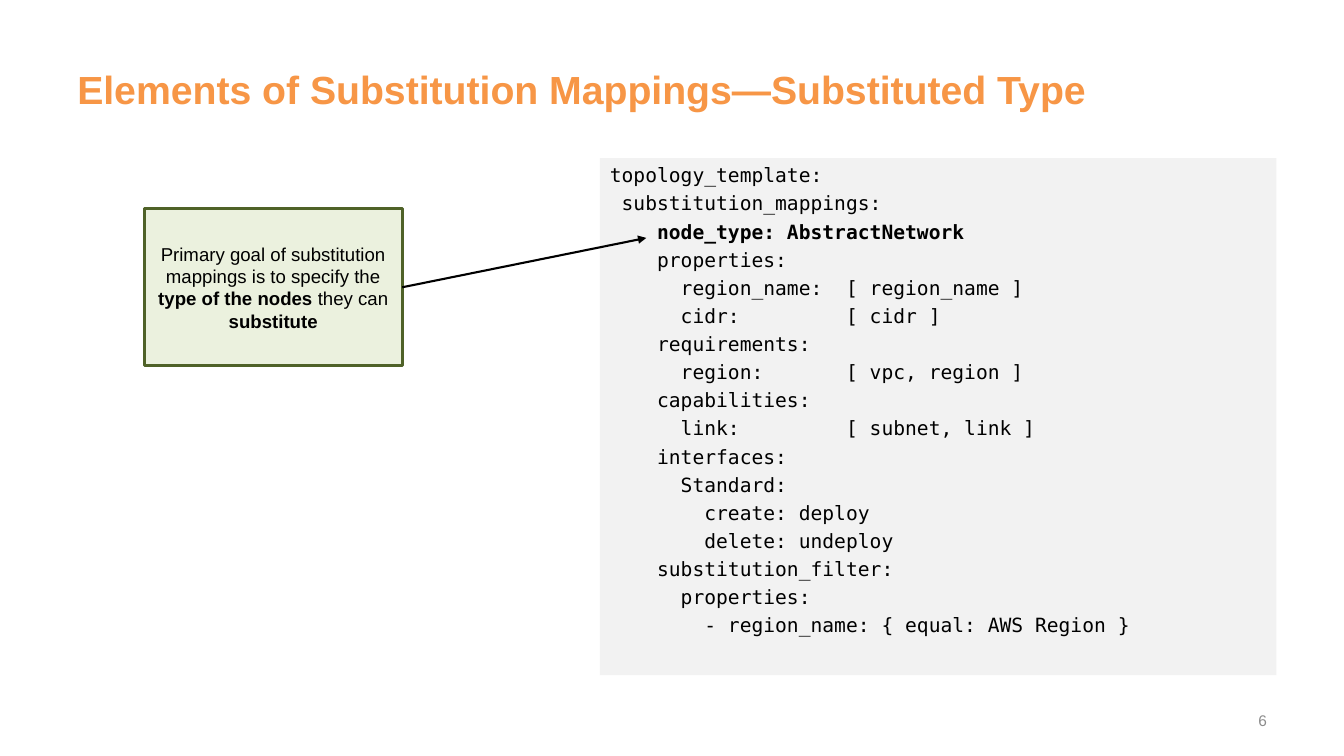
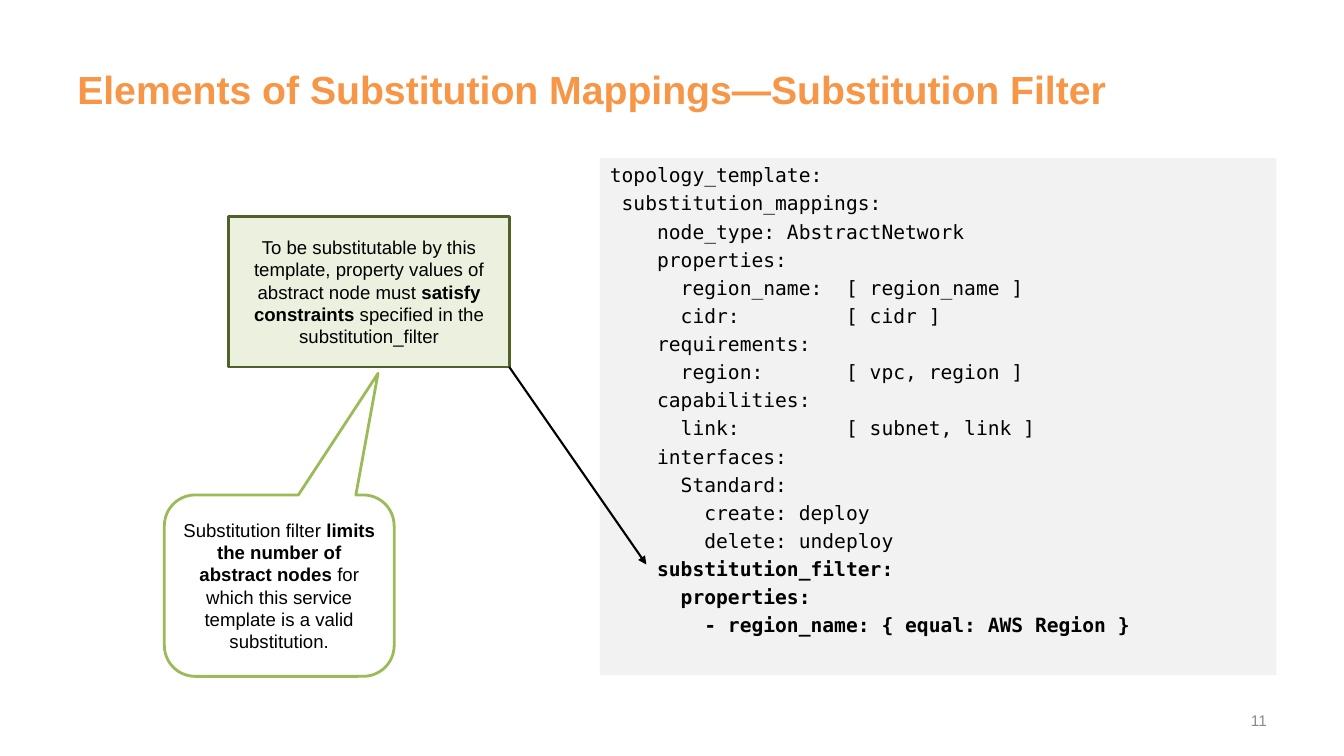
"""Build two slides on the elements of substitution mappings."""
from dataclasses import dataclass

import pptx
import pptx.dml.color
import pptx.enum.shapes
import pptx.enum.text
import pptx.oxml
import pptx.oxml.ns
import pptx.util

SHAPE = pptx.enum.shapes.MSO_SHAPE
ALIGN = pptx.enum.text.PP_ALIGN
ANCHOR = pptx.enum.text.MSO_ANCHOR
WIDTH, HEIGHT = pptx.util.Inches(13.33), pptx.util.Inches(7.5)


@dataclass(frozen=True)
class Theme:
    font: str = "Arial"
    code_font: str = "DejaVu Sans Mono"
    title: str = "F79646"
    text: str = "000000"
    muted: str = "8C8C8C"
    panel: str = "F2F2F2"
    note_fill: str = "EBF1DE"
    note_line: str = "4F6228"
    callout_fill: str = "FFFFFF"
    callout_line: str = "9BBB59"
    title_size: float = 28
    code_size: float = 14
    note_size: float = 13.3
    number_size: float = 11
    code_gap: float = 3.3
    outline: float = 2
    arrow: float = 1.5


THEME = Theme()

TITLE_AREA = (5, 6, 90, 11.6)
CODE_AREA = (44.64, 20.93, 50.34, 68.4)
NUMBER_AREA = (71.7, 92.67, 23.3, 5.33)
ARROW_TIP_X = 48.09

CODE = """topology_template:
 substitution_mappings:
    node_type: AbstractNetwork
    properties:
      region_name:  [ region_name ]
      cidr:         [ cidr ]
    requirements:
      region:       [ vpc, region ]
    capabilities:
      link:         [ subnet, link ]
    interfaces:
      Standard:
        create: deploy
        delete: undeploy
    substitution_filter:
      properties:
        - region_name: { equal: AWS Region }""".split("\n")

SLIDES = [
    {
        "title": "Elements of Substitution Mappings—Substituted Type",
        "number": "6",
        "bold_lines": range(2, 3),
        "note": "Primary goal of substitution mappings is to specify the "
                "**type of the nodes** they can **substitute**",
        "note_area": (10.73, 27.6, 19.2, 20.8),
        "from_corner": False,
        "tip_y": 31.47,
    },
    {
        "title": "Elements of Substitution Mappings—Substitution Filter",
        "number": "11",
        "bold_lines": range(14, 17),
        "note": "To be substitutable by this template, property values of abstract "
                "node must **satisfy constraints** specified in the substitution_filter",
        "note_area": (17.03, 28.67, 20.86, 19.87),
        "from_corner": True,
        "tip_y": 74.67,
        "callout": "Substitution filter **limits the number of abstract nodes** for "
                   "which this service template is a valid substitution.",
        "callout_area": (12.23, 65.47, 17.1, 24),
        "callout_adjust": (0.43, -1.17, 0.17),
    },
]


def across(share):
    return round(WIDTH * share / 100)


def down(share):
    return round(HEIGHT * share / 100)


def place(area):
    x, y, w, h = area
    return across(x), down(y), across(w), down(h)


def rgb(code):
    return pptx.dml.color.RGBColor.from_string(code)


def style(font, size, color=THEME.text, name=THEME.font, bold=False):
    font.size, font.name, font.bold = pptx.util.Pt(size), name, bold
    font.color.rgb = rgb(color)


def add_box(s, kind, area, fill, line=None):
    sp = s.shapes.add_shape(kind, *place(area))
    sp.shadow.inherit = False
    sp.fill.solid()
    sp.fill.fore_color.rgb = rgb(fill)
    if line:
        sp.line.color.rgb = rgb(line)
        sp.line.width = pptx.util.Pt(THEME.outline)
    else:
        sp.line.fill.background()
    sp.text_frame.word_wrap = True
    return sp


def write_note(sp, text):
    tf = sp.text_frame
    tf.vertical_anchor = ANCHOR.MIDDLE
    p = tf.paragraphs[0]
    p.alignment = ALIGN.CENTER
    for i, part in enumerate(text.split("**")):
        if part:
            r = p.add_run()
            r.text = part
            style(r.font, THEME.note_size, bold=i % 2 == 1)


def add_title(s, text):
    sp = s.shapes.title
    sp.left, sp.top, sp.width, sp.height = place(TITLE_AREA)
    tf = sp.text_frame
    tf.text = text
    tf.vertical_anchor = ANCHOR.MIDDLE
    p = tf.paragraphs[0]
    p.alignment = ALIGN.LEFT
    style(p.runs[0].font, THEME.title_size, THEME.title, bold=True)


def add_code(s, bold_lines):
    tf = add_box(s, SHAPE.RECTANGLE, CODE_AREA, THEME.panel).text_frame
    tf.vertical_anchor = ANCHOR.TOP
    for i, line in enumerate(CODE):
        p = tf.add_paragraph() if i else tf.paragraphs[0]
        p.text = line
        p.alignment = ALIGN.LEFT
        if i:
            p.space_before = pptx.util.Pt(THEME.code_gap)
        style(p.runs[0].font, THEME.code_size, name=THEME.code_font, bold=i in bold_lines)


def add_number(s, text):
    tf = s.shapes.add_textbox(*place(NUMBER_AREA)).text_frame
    tf.word_wrap = True
    tf.vertical_anchor = ANCHOR.MIDDLE
    tf.text = text
    p = tf.paragraphs[0]
    p.alignment = ALIGN.RIGHT
    style(p.runs[0].font, THEME.number_size, THEME.muted)


def add_arrow(s, note, from_corner, tip_y):
    start_y = note.top + (note.height if from_corner else note.height // 2)
    c = s.shapes.add_connector(pptx.enum.shapes.MSO_CONNECTOR.STRAIGHT,
                               note.left + note.width, start_y,
                               across(ARROW_TIP_X), down(tip_y))
    if not from_corner:
        c.begin_connect(note, 3)
    c.line.color.rgb = rgb(THEME.text)
    c.line.width = pptx.util.Pt(THEME.arrow)
    ns = pptx.oxml.ns.nsdecls("a")
    c.line._get_or_add_ln().append(
        pptx.oxml.parse_xml(f'<a:tailEnd {ns} type="triangle"/>'))
    c._element.spPr.append(pptx.oxml.parse_xml(f"<a:effectLst {ns}/>"))


def add_callout(s, text, area, adjust):
    sp = add_box(s, SHAPE.ROUNDED_RECTANGULAR_CALLOUT, area,
                 THEME.callout_fill, THEME.callout_line)
    for i, value in enumerate(adjust):
        sp.adjustments[i] = value
    write_note(sp, text)


def build_slide(prs, data):
    s = prs.slides.add_slide(prs.slide_layouts[5])
    add_title(s, data["title"])
    add_code(s, data["bold_lines"])
    add_number(s, data["number"])
    note = add_box(s, SHAPE.RECTANGLE, data["note_area"], THEME.note_fill, THEME.note_line)
    write_note(note, data["note"])
    add_arrow(s, note, data["from_corner"], data["tip_y"])
    if "callout" in data:
        add_callout(s, data["callout"], data["callout_area"], data["callout_adjust"])


def main():
    prs = pptx.Presentation()
    prs.slide_width, prs.slide_height = WIDTH, HEIGHT
    for data in SLIDES:
        build_slide(prs, data)
    prs.save("out.pptx")


if __name__ == "__main__":
    main()
